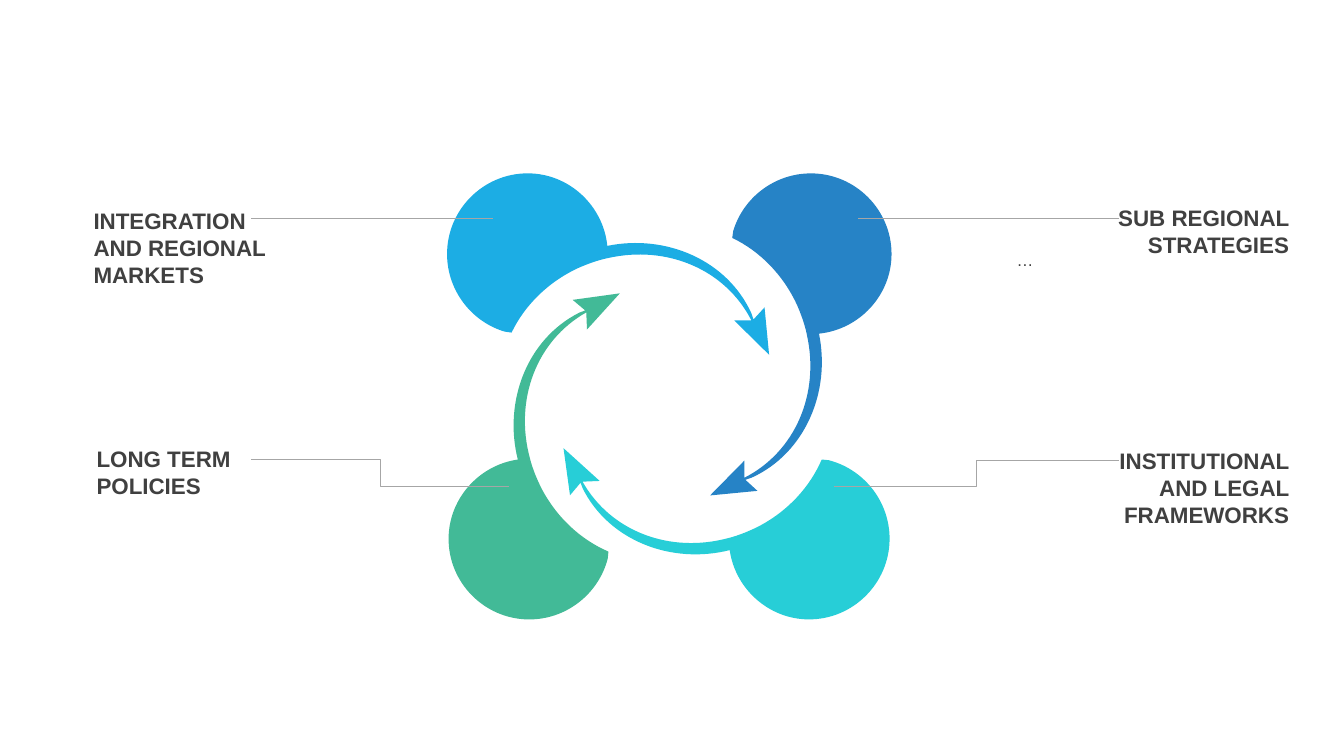
from dataclasses import dataclass
from math import cos, radians, sin

from lxml import etree
from pptx import Presentation
from pptx import util as u
from pptx.dml.color import RGBColor
from pptx.enum import shapes, text
from pptx.oxml.ns import qn

# Square grid: columns and rows of a tenth of an inch
CELL = u.Inches(0.1)
WIDE, HIGH = 133.33, 75
INK = {"sky": "1CADE4", "blue": "2683C6", "aqua": "27CED7", "green": "42BA97",
       "text": "404040", "line": "A6A6A6", "white": "FFFFFF"}
Point = tuple[float, float]

# Disc with a curved arrow, measured from the disc's centre;
# one point is a straight edge, three points a curve
START: Point = (23.95, 10)
EDGES: list[tuple[Point, ...]] = [
    ((23.5, 5.3),), ((22.4, 6.5),), ((22.2, 5.9),),
    ((19.8, 0.6), (13.7, -2), (7.9, -0.8)),
    ((7.5, -4.8), (4.1, -8), (0, -8)),
    ((-4.4, -8), (-8, -4.4), (-8, 0)),
    ((-8, 3.6), (-5.6, 6.7), (-2.3, 7.7)),
    ((-1.6, 7.8),),
    ((-0.3, 5.1), (2, 2.8), (5, 1.4)),
    ((6.8, 0.6), (8, 0.4), (8, 0.4)),
    ((13.8, -0.9), (19.6, 1.5), (22.2, 6.6)),
    ((20.5, 6.6),),
]


@dataclass
class Arm:
    x: float
    y: float
    turn: float
    ink: str

    def spot(self, dot: Point) -> list[int]:
        """Place on the slide of a dot of the turned outline."""
        c, s = cos(radians(self.turn)), sin(radians(self.turn))
        x, y = dot
        return span(self.x + x * c - y * s, self.y + x * s + y * c)


@dataclass
class Label:
    words: str
    x: float
    y: float
    rows: float
    side: text.PP_ALIGN


@dataclass
class Lead:
    kind: shapes.MSO_CONNECTOR
    start: Point
    end: Point


LEFT, RIGHT = text.PP_ALIGN.LEFT, text.PP_ALIGN.RIGHT
FLAT, BENT = shapes.MSO_CONNECTOR.STRAIGHT, shapes.MSO_CONNECTOR.ELBOW

ARMS = [Arm(52.35, 25.2, 0, "sky"), Arm(80.45, 25.2, 90, "blue"),
        Arm(80.25, 53.45, 177.6, "aqua"), Arm(52.5, 53.45, 267.6, "green")]
LABELS = [
    Label("INTEGRATION AND REGIONAL MARKETS", 8.3, 20.03, 9.1, LEFT),
    Label("LONG TERM POLICIES", 8.6, 43.63, 6.4, LEFT),
    Label("SUB REGIONAL STRATEGIES", 106.87, 19.7, 6.4, RIGHT),
    Label("INSTITUTIONAL AND LEGAL FRAMEWORKS", 106.87, 43.83, 9.1, RIGHT),
]
LEADS = [
    Lead(FLAT, (48.9, 21.7), (24.9, 21.7)),
    Lead(BENT, (50.5, 48.25), (24.9, 45.55)),
    Lead(FLAT, (111, 21.7), (85.1, 21.7)),
    Lead(BENT, (111, 45.65), (82.7, 48.25)),
]


def span(*cells: float) -> list[int]:
    return [round(c * CELL) for c in cells]


def tint(name: str) -> RGBColor:
    return RGBColor.from_string(INK[name])


def draw_arm(slide, arm: Arm) -> None:
    pen = slide.shapes.build_freeform(*arm.spot(START))
    pen.add_line_segments([arm.spot(edge[-1]) for edge in EDGES], close=True)
    form = pen.convert_to_shape()
    form.shadow.inherit = False
    form.fill.solid()
    form.fill.fore_color.rgb = tint(arm.ink)
    form.line.fill.background()
    # Bend the edges that have control points
    for edge, side in zip(EDGES, list(form._element.iter(qn("a:lnTo")))):
        if len(edge) == 3:
            side.tag = qn("a:cubicBezTo")
            side.clear()
            for dot in edge:
                x, y = arm.spot(dot)
                etree.SubElement(side, qn("a:pt"),
                                 x=str(x - form.left), y=str(y - form.top))


def write(box, words: str, size: int, bold: bool, side: text.PP_ALIGN) -> None:
    frame = box.text_frame
    frame.text = words
    frame.word_wrap = True
    frame.auto_size = text.MSO_AUTO_SIZE.SHAPE_TO_FIT_TEXT
    para = frame.paragraphs[0]
    para.alignment = side
    font = para.runs[0].font
    font.name, font.size, font.bold = "Arial", u.Pt(size), bold
    font.color.rgb = tint("text")


def draw_label(slide, label: Label) -> None:
    box = slide.shapes.add_shape(shapes.MSO_SHAPE.RECTANGLE,
                                 *span(label.x, label.y, 22, label.rows))
    box.shadow.inherit = False
    box.fill.solid()
    box.fill.fore_color.rgb = tint("white")
    box.line.fill.background()
    write(box, label.words, 16, True, label.side)


def draw_lead(slide, lead: Lead) -> None:
    line = slide.shapes.add_connector(lead.kind, *span(*lead.start, *lead.end))
    line.line.color.rgb = tint("line")
    line.line.width = u.Pt(0.5)
    etree.SubElement(line._element.spPr, qn("a:effectLst"))


def main() -> None:
    deck = Presentation()
    deck.slide_width, deck.slide_height = span(WIDE, HIGH)
    slide = deck.slides.add_slide(deck.slide_layouts[6])

    # Ring of four arms
    for arm in ARMS:
        draw_arm(slide, arm)

    # Labels and the short note
    for label in LABELS[:2]:
        draw_label(slide, label)
    note = slide.shapes.add_textbox(*span(99.87, 23.3, 29, 3.7))
    write(note, "…", 12, False, text.PP_ALIGN.JUSTIFY)
    note.text_frame.paragraphs[0].line_spacing = 1.5
    for label in LABELS[2:]:
        draw_label(slide, label)

    # Lines from the labels to the discs
    for lead in LEADS:
        draw_lead(slide, lead)

    deck.save("out.pptx")


if __name__ == "__main__":
    main()
